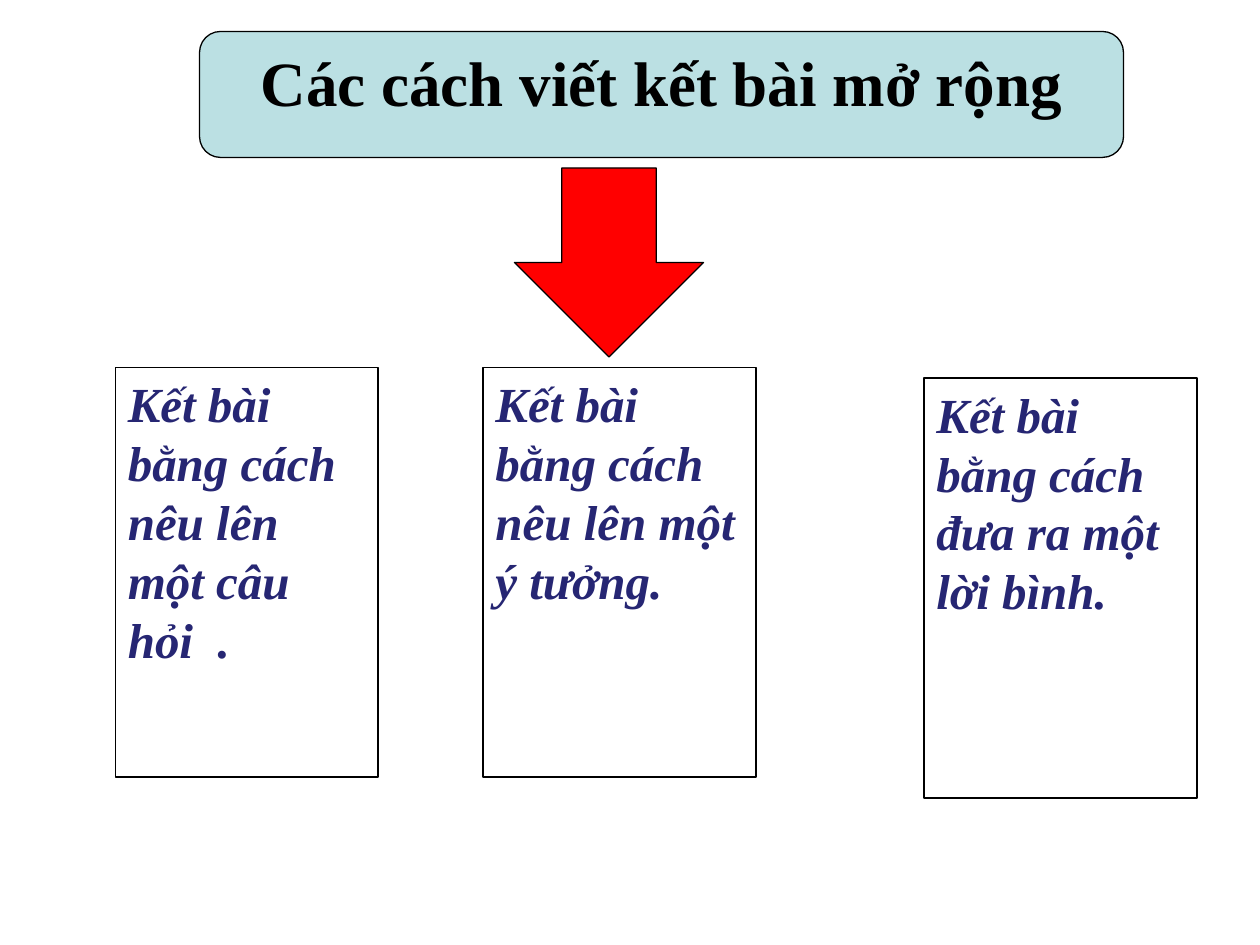
import pptx
import pptx.util
import pptx.dml.color
import pptx.enum.shapes
import pptx.enum.text

Pt = pptx.util.Pt
SHAPE = pptx.enum.shapes.MSO_SHAPE
ALIGN = pptx.enum.text.PP_ALIGN


def rgb(value):
    return pptx.dml.color.RGBColor.from_string(value)


def add_outlined(s, kind, box, fill=None):
    sp = s.shapes.add_shape(kind, *(Pt(v) for v in box))
    sp.shadow.inherit = False
    if fill:
        sp.fill.solid()
        sp.fill.fore_color.rgb = rgb(fill)
    else:
        sp.fill.background()
    sp.line.color.rgb = rgb("000000")
    sp.line.width = Pt(0.75)
    return sp


def set_text(sp, text, size, color, align, italic=False):
    tf = sp.text_frame
    tf.word_wrap = True
    tf.vertical_anchor = pptx.enum.text.MSO_ANCHOR.TOP
    tf.text = text
    p = tf.paragraphs[0]
    p.alignment = align
    r = p.runs[0]
    r.font.name = "Times New Roman"
    r.font.size = Pt(size)
    r.font.bold = True
    r.font.italic = italic
    r.font.color.rgb = rgb(color)


def add_title(s, box, text):
    sp = add_outlined(s, SHAPE.ROUNDED_RECTANGLE, box, "BBE0E3")
    set_text(sp, text, 36, "000000", ALIGN.CENTER)


def add_method(s, box, text):
    sp = add_outlined(s, SHAPE.RECTANGLE, box)
    set_text(sp, text, 28, "262673", ALIGN.LEFT, italic=True)


def add_arrow(s, box):
    add_outlined(s, SHAPE.DOWN_ARROW, box, "FF0000")


def main():
    prs = pptx.Presentation()
    prs.slide_width, prs.slide_height = Pt(720), Pt(540)
    s = prs.slides.add_slide(prs.slide_layouts[6])
    add_title(s, (114, 18, 528, 72), "Các cách viết kết bài mở rộng")
    methods = [
        ((66, 210, 150, 234), "Kết bài bằng cách nêu lên một câu hỏi  ."),
        ((276, 210, 156, 234), "Kết bài bằng cách nêu lên một ý tưởng."),
        ((528, 216, 156, 240), "Kết bài bằng cách đưa ra một lời bình."),
    ]
    for box, text in methods:
        add_method(s, box, text)
    add_arrow(s, (294, 96, 108, 108))
    prs.save("out.pptx")


if __name__ == "__main__":
    main()
